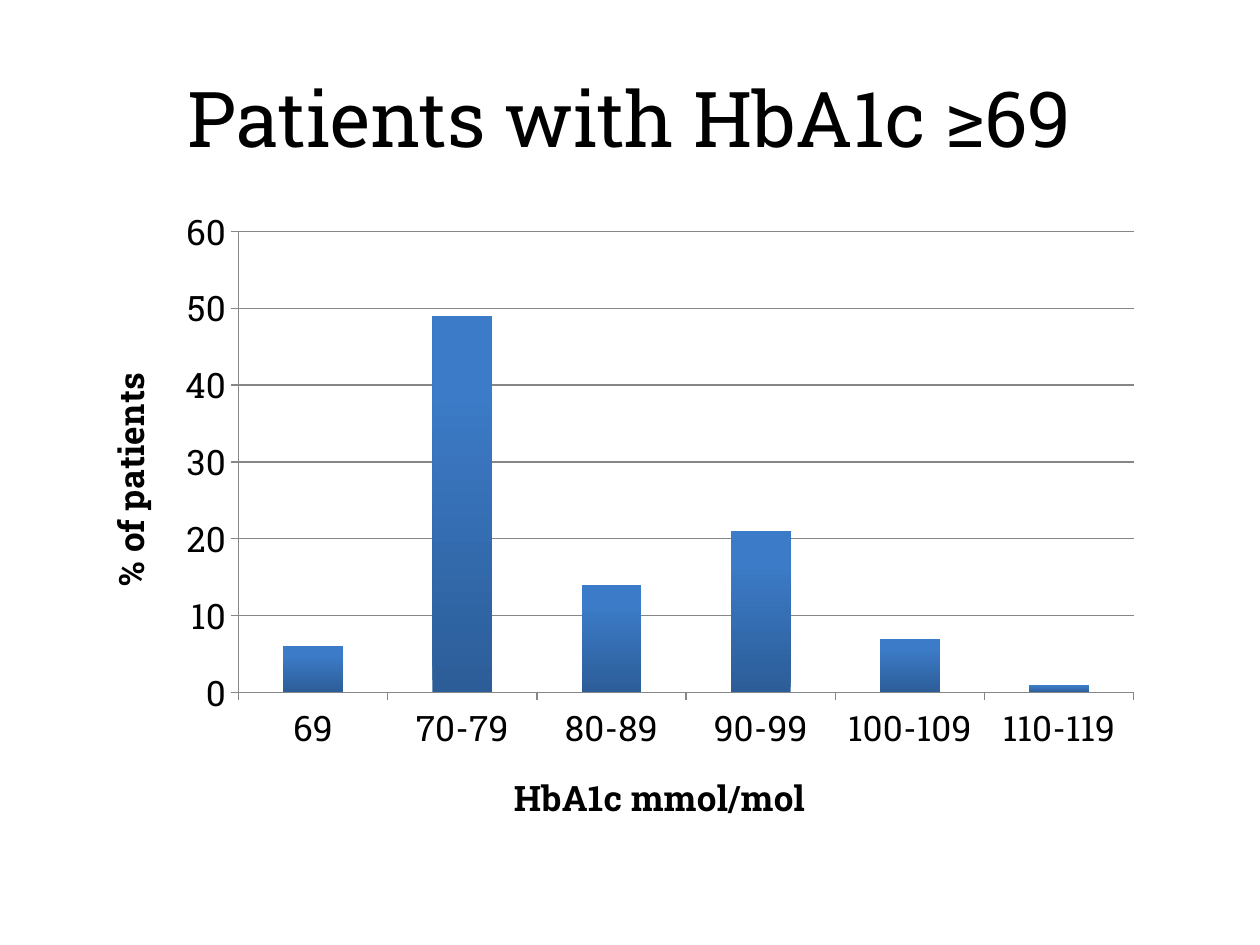
from pptx import Presentation
from pptx.chart.data import CategoryChartData
from pptx.dml.color import RGBColor
from pptx.enum.chart import XL_CHART_TYPE as ChartType, XL_TICK_MARK as TickMark
from pptx.enum.text import MSO_ANCHOR, PP_ALIGN
from pptx.util import Inches, Pt

BLACK = RGBColor(0x00, 0x00, 0x00)
GRAY = RGBColor(0x86, 0x86, 0x86)
DARK_BLUE = RGBColor(0x2C, 0x5D, 0x98)
BLUE = RGBColor(0x3C, 0x7B, 0xC7)
FONT = "Roboto Slab"


def style_font(font, size, bold=False):
    font.name, font.size, font.bold = FONT, Pt(size), bold
    font.color.rgb = BLACK


deck = Presentation()
deck.slide_width, deck.slide_height = Inches(10), Inches(7.5)
page = deck.slides.add_slide(deck.slide_layouts[5])

title = page.shapes.title
title.left, title.top = Inches(0.5), Inches(0.3)
title.width, title.height = Inches(9), Inches(1.25)
title.text_frame.text = "Patients with HbA1c ≥69"
title.text_frame.vertical_anchor = MSO_ANCHOR.MIDDLE
para = title.text_frame.paragraphs[0]
para.alignment = PP_ALIGN.CENTER
style_font(para.font, 44)

data = CategoryChartData()
data.categories = ["69", "70-79", "80-89", "90-99", "100-109", "110-119"]
data.add_series("Series 1", [6, 49, 14, 21, 7, 1])
chart = page.shapes.add_chart(
    ChartType.COLUMN_CLUSTERED,
    Inches(0.59), Inches(1.55), Inches(8.58), Inches(5.21), data,
).chart
chart.has_legend = False
chart.has_title = False
chart.font.name, chart.font.size = "Calibri", Pt(18)
chart.font.color.rgb = BLACK

for axis, caption in (
    (chart.category_axis, "HbA1c mmol/mol"),
    (chart.value_axis, "% of patients"),
):
    axis.major_tick_mark = TickMark.OUTSIDE
    axis.minor_tick_mark = TickMark.NONE
    axis.format.line.color.rgb = GRAY
    style_font(axis.tick_labels.font, 20)
    axis.axis_title.text_frame.text = caption
    style_font(axis.axis_title.text_frame.paragraphs[0].font, 20, bold=True)

value_axis = chart.value_axis
value_axis.minimum_scale, value_axis.maximum_scale = 0, 60
value_axis.major_unit = 10
value_axis.has_major_gridlines = True
value_axis.major_gridlines.format.line.color.rgb = GRAY

plot = chart.plots[0]
plot.gap_width = 150
plot.vary_by_categories = False
fill = plot.series[0].format.fill
fill.gradient()
fill.gradient_angle = 90
for stop, position, color in zip(fill.gradient_stops, (0, 0.8), (DARK_BLUE, BLUE)):
    stop.position = position
    stop.color.rgb = color

deck.save("out.pptx")
